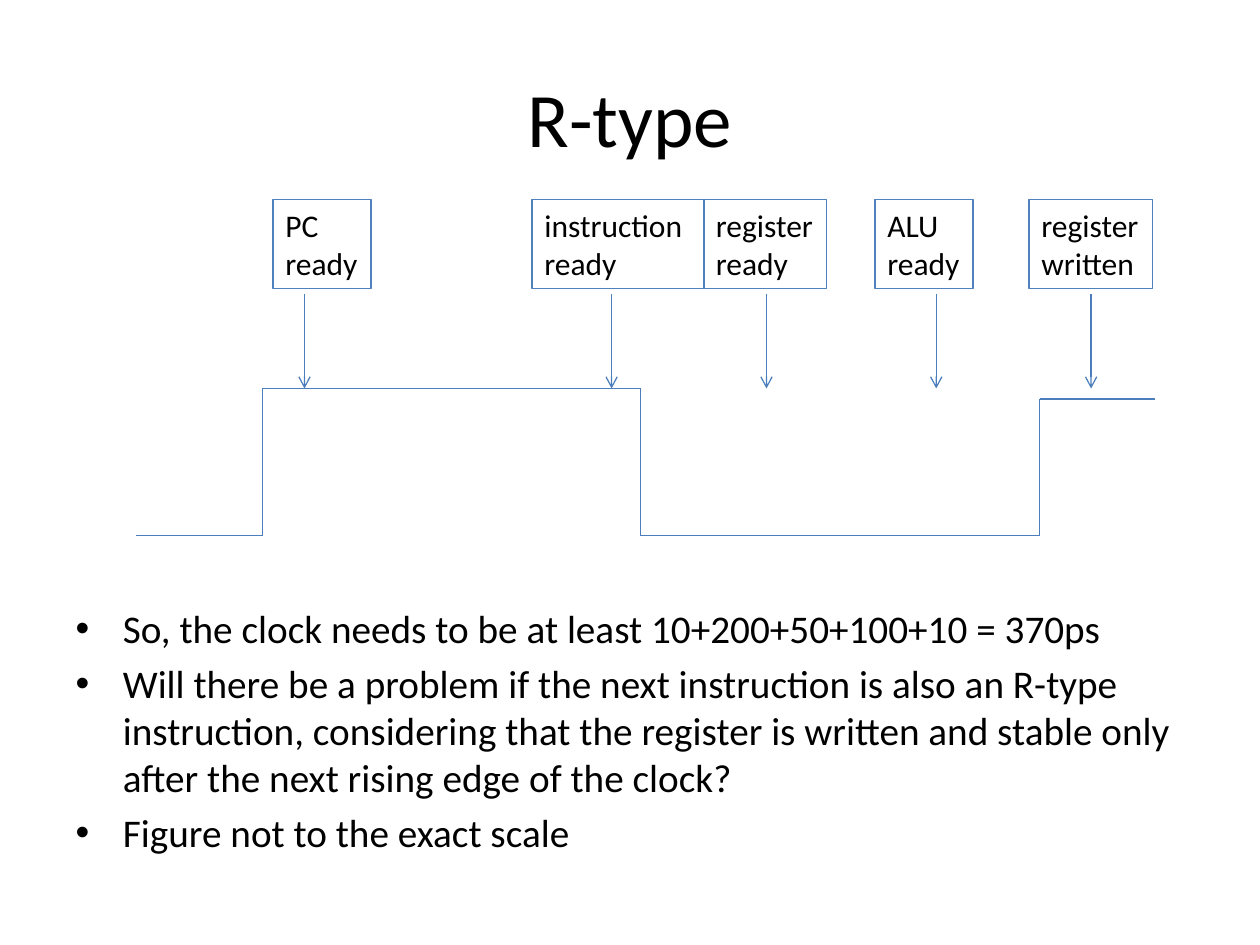
from lxml import etree
from pptx import Presentation
from pptx.dml.color import RGBColor
from pptx.enum.shapes import MSO_CONNECTOR as Connector
from pptx.enum.text import MSO_ANCHOR as Anchor, MSO_AUTO_SIZE as AutoSize
from pptx.oxml.ns import qn
from pptx.util import Pt

FONT = "Calibri"
TEXT, LINE, BORDER = "000000", "4B7EBC", "4F81BD"

# label, left, width, arrow offset from the left edge
EVENTS = [
    ("PC\nready", 156, 56, 18),
    ("instruction\nready", 304, 98.5, 45.5),
    ("register\nready", 402, 70.5, 36),
    ("ALU\nready", 500, 56, 35),
    ("register\nwritten", 588, 70.5, 35.5),
]
BULLETS = [
    "So, the clock needs to be at least 10+200+50+100+10 = 370ps",
    "Will there be a problem if the next instruction is also an R-type "
    "instruction, considering that the register is written and stable only "
    "after the next rising edge of the clock?",
    "Figure not to the exact scale",
]


def color(value):
    return RGBColor.from_string(value)


def apply_format(target, values):
    for name, value in values.items():
        setattr(target, name, value)


def write_text(frame, text, size):
    frame.text = text
    for para in frame.paragraphs:
        for span in para.runs:
            apply_format(span.font, {"name": FONT, "size": Pt(size)})
            span.font.color.rgb = color(TEXT)


def fill_placeholder(holder, box, text, size, anchor):
    names = ("left", "top", "width", "height")
    apply_format(holder, dict(zip(names, map(Pt, box))))
    frame = holder.text_frame
    write_text(frame, text, size)
    apply_format(frame, {"auto_size": AutoSize.NONE, "vertical_anchor": anchor})


def add_line(shapes, start, end, arrow=False):
    line = shapes.add_connector(Connector.STRAIGHT, *map(Pt, start + end))
    line.line.color.rgb = color(LINE)
    line.line.width = Pt(0.75)
    if arrow:
        etree.SubElement(line.line._get_or_add_ln(), qn("a:tailEnd"), type="arrow")
    etree.SubElement(line._element.spPr, qn("a:effectLst"))


def add_event(page, box, label, arrow_offset):
    """Place a bordered label with an arrow pointing down to the clock line."""
    left, top, width, height = box
    group = page.shapes.add_group_shape()
    arrow_x = left + arrow_offset
    add_line(group.shapes, (arrow_x, top + 54), (arrow_x, top + height), arrow=True)
    label_box = group.shapes.add_textbox(Pt(left), Pt(top), Pt(width), Pt(51))
    label_box.line.color.rgb = color(BORDER)
    label_box.line.width = Pt(0.75)
    write_text(label_box.text_frame, label, 18)
    apply_format(label_box.text_frame,
                 {"word_wrap": False, "auto_size": AutoSize.SHAPE_TO_FIT_TEXT})


def add_clock(page, box):
    """Draw the clock signal; the second high level is slightly lower."""
    left, top, width, height = box
    low, high, next_high = height, 0, 6
    rise, fall, next_rise = 72, 288, 516
    corners = [
        (0, low), (rise, low), (rise, high), (fall, high),
        (fall, low), (next_rise, low), (next_rise, next_high), (width, next_high),
    ]
    points = [(left + x, top + y) for x, y in corners]
    for start, end in zip(points, points[1:]):
        add_line(page.shapes, start, end)


def build_page(deck):
    page = deck.slides.add_slide(deck.slide_layouts[1])
    title, body = page.placeholders
    fill_placeholder(title, (36, 21.6, 648, 90), "R-type", 44, Anchor.MIDDLE)
    fill_placeholder(body, (36, 342, 648, 140.4), "\n".join(BULLETS), 22.4, Anchor.TOP)
    add_clock(page, (78, 222, 582, 84))
    for label, left, width, arrow_offset in EVENTS:
        add_event(page, (left, 114, width, 108), label, arrow_offset)


def main():
    deck = Presentation()
    apply_format(deck, {"slide_width": Pt(720), "slide_height": Pt(540)})
    build_page(deck)
    deck.save("out.pptx")


if __name__ == "__main__":
    main()
